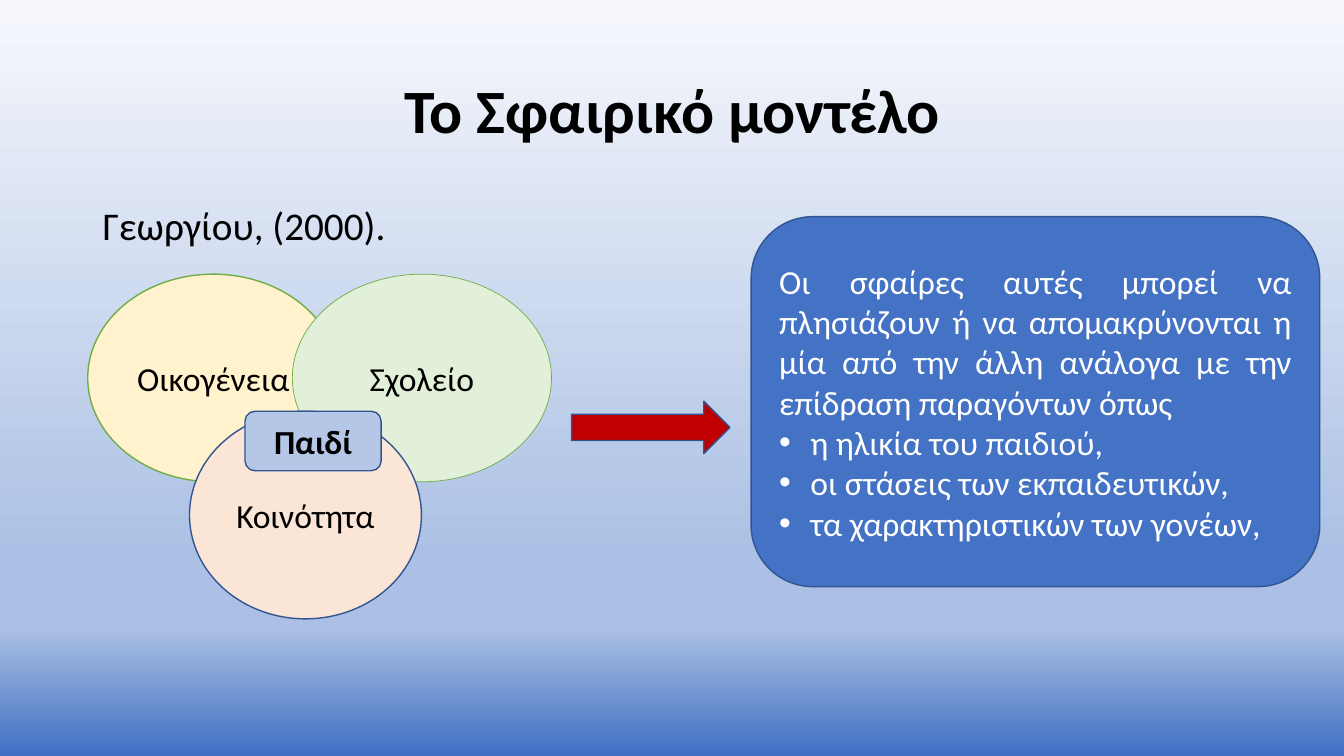
import copy

import pptx
import pptx.dml.color
import pptx.enum.shapes
import pptx.enum.text
import pptx.oxml
import pptx.oxml.ns
import pptx.util

Inches = pptx.util.Inches
Pt = pptx.util.Pt
RGBColor = pptx.dml.color.RGBColor
SHAPE = pptx.enum.shapes.MSO_SHAPE
ALIGN = pptx.enum.text.PP_ALIGN
ANCHOR = pptx.enum.text.MSO_ANCHOR
qn = pptx.oxml.ns.qn

BLACK = RGBColor(0x00, 0x00, 0x00)
WHITE = RGBColor(0xFF, 0xFF, 0xFF)
BLUE = RGBColor(0x44, 0x72, 0xC4)
DARK_BLUE = RGBColor(0x32, 0x54, 0x91)
LIGHT_BLUE = RGBColor(0xB4, 0xC7, 0xE7)
GREEN = RGBColor(0x70, 0xAD, 0x47)
LIGHT_GREEN = RGBColor(0xE2, 0xF0, 0xD9)
CREAM = RGBColor(0xFF, 0xF2, 0xCC)
PEACH = RGBColor(0xFB, 0xE5, 0xD6)
RED = RGBColor(0xC0, 0x00, 0x00)
SKY_TOP = RGBColor(0xF6, 0xF8, 0xFC)
SKY_MIDDLE = RGBColor(0xAB, 0xC0, 0xE4)
SKY_BOTTOM = RGBColor(0x40, 0x6F, 0xC3)


def write_paragraph(frame, text, *, font="Calibri", size=24, color=BLACK, bold=False,
                    align=ALIGN.CENTER, line_spacing=None, space_before=0, bullet=False):
    """Write into the frame's empty first paragraph, or add a new one."""
    first = frame.paragraphs[0]
    paragraph = frame.add_paragraph() if first.runs else first
    paragraph.alignment = align
    paragraph.line_spacing = line_spacing
    paragraph.space_before = Pt(space_before)
    run = paragraph.add_run()
    run.text = text
    run.font.name = font
    run.font.size = Pt(size)
    run.font.bold = bold
    run.font.color.rgb = color
    if bullet:
        properties = paragraph._p.get_or_add_pPr()
        properties.set("marL", str(Inches(0.31)))
        properties.set("indent", str(-Inches(0.31)))
        bullet_font = pptx.oxml.parse_xml(
            f'<a:buFont {pptx.oxml.ns.nsdecls("a")} typeface="Arial"/>')
        bullet_mark = pptx.oxml.parse_xml(
            f'<a:buChar {pptx.oxml.ns.nsdecls("a")} char="•"/>')
        properties.extend([bullet_font, bullet_mark])


class SlideBuilder:
    def __init__(self, slide, outline=DARK_BLUE, outline_width=1):
        self.slide = slide
        self.outline = outline
        self.outline_width = outline_width

    def background(self, stops):
        fill = self.slide.background.fill
        fill.gradient()
        fill.gradient_angle = 270
        stop_list = self.slide.element.find(".//" + qn("a:gsLst"))
        for _ in range(len(stops) - len(stop_list)):
            stop_list.append(copy.deepcopy(stop_list[0]))
        for stop, (position, color) in zip(fill.gradient_stops, stops):
            stop.position = position
            stop.color.rgb = color

    def text_box(self, box, text, anchor=ANCHOR.TOP, **text_format):
        shape = self.slide.shapes.add_textbox(*map(Inches, box))
        shape.text_frame.word_wrap = True
        shape.text_frame.vertical_anchor = anchor
        write_paragraph(shape.text_frame, text, line_spacing=0.9, **text_format)

    def shape(self, kind, box, fill, text=None, outline=None, width=None, **text_format):
        shape = self.slide.shapes.add_shape(kind, *map(Inches, box))
        shape.shadow.inherit = False
        shape.fill.solid()
        shape.fill.fore_color.rgb = fill
        shape.line.color.rgb = outline or self.outline
        shape.line.width = Pt(width or self.outline_width)
        shape.text_frame.word_wrap = True
        shape.text_frame.vertical_anchor = ANCHOR.MIDDLE
        if text:
            write_paragraph(shape.text_frame, text, **text_format)
        return shape


def main():
    presentation = pptx.Presentation()
    presentation.slide_width = Inches(13.33)
    presentation.slide_height = Inches(7.5)
    builder = SlideBuilder(presentation.slides.add_slide(presentation.slide_layouts[6]))
    builder.background([(0, SKY_TOP), (0.74, SKY_MIDDLE), (0.83, SKY_MIDDLE), (1, SKY_BOTTOM)])

    # Title and source
    builder.text_box((0.92, 0.4, 11.5, 1.45), "Το Σφαιρικό μοντέλο",
                     anchor=ANCHOR.MIDDLE, size=44, bold=True)
    builder.text_box((0.92, 2, 11.5, 0.6), "Γεωργίου, (2000).",
                     size=28, align=ALIGN.LEFT, space_before=10)

    # Overlapping spheres with the child at the centre
    sphere_height = 2.06
    for name, left, top, width, fill, outline, line_width in [
        ("Οικογένεια", 0.87, 2.72, 2.49, CREAM, GREEN, 1),
        ("Σχολείο", 2.9, 2.72, 2.57, LIGHT_GREEN, GREEN, 0.5),
        ("Κοινότητα", 1.88, 4.08, 2.3, PEACH, DARK_BLUE, 1),
    ]:
        builder.shape(SHAPE.OVAL, (left, top, width, sphere_height), fill, name,
                      outline=outline, width=line_width)
    builder.shape(SHAPE.ROUNDED_RECTANGLE, (2.43, 4.08, 1.35, 0.59), LIGHT_BLUE,
                  "Παιδί", bold=True)

    # Explanation panel
    panel = builder.shape(SHAPE.ROUNDED_RECTANGLE, (7.45, 2.15, 5.64, 3.67), BLUE)
    write_paragraph(
        panel.text_frame,
        "Οι σφαίρες αυτές μπορεί να πλησιάζουν ή να απομακρύνονται η μία "
        "από την άλλη ανάλογα με την επίδραση παραγόντων όπως",
        color=WHITE, align=ALIGN.JUSTIFY)
    for factor in ("η ηλικία του παιδιού,", "οι στάσεις των εκπαιδευτικών,",
                   "τα χαρακτηριστικών των γονέων,"):
        write_paragraph(panel.text_frame, factor, color=WHITE,
                        align=ALIGN.JUSTIFY, bullet=True)

    # Arrow from the spheres to the panel
    builder.shape(SHAPE.RIGHT_ARROW, (5.67, 3.98, 1.57, 0.52), RED)

    presentation.save("out.pptx")


if __name__ == "__main__":
    main()
